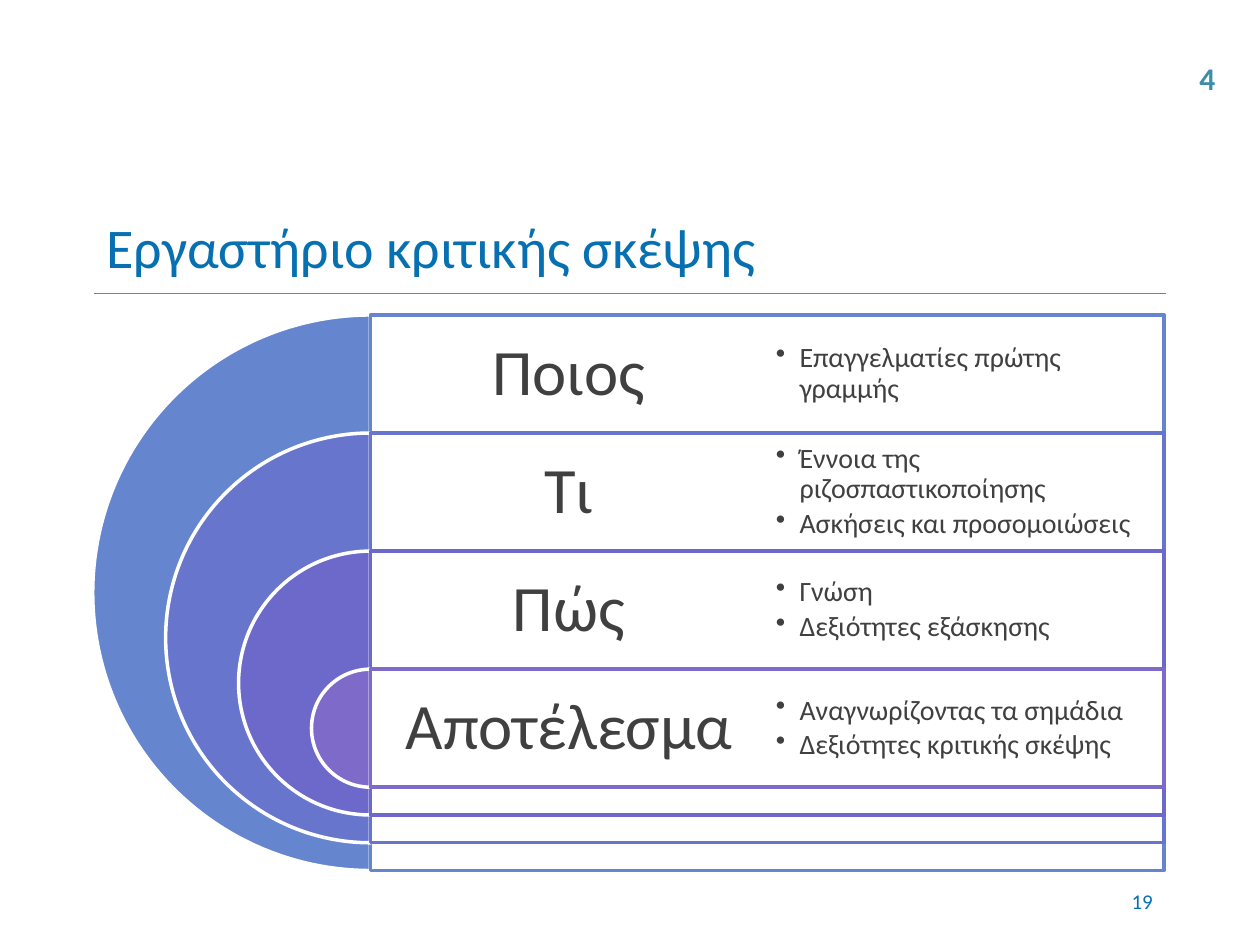
from lxml import etree
from pptx import Presentation
from pptx.dml.color import RGBColor
from pptx.enum.shapes import MSO_CONNECTOR, MSO_SHAPE
from pptx.enum.text import MSO_ANCHOR, PP_ALIGN
from pptx.oxml.ns import qn
from pptx.util import Cm, Pt

PIE, RECTANGLE = MSO_SHAPE.PIE, MSO_SHAPE.RECTANGLE
STRAIGHT = MSO_CONNECTOR.STRAIGHT
TOP, MIDDLE = MSO_ANCHOR.TOP, MSO_ANCHOR.MIDDLE
LEFT, CENTER, RIGHT = PP_ALIGN.LEFT, PP_ALIGN.CENTER, PP_ALIGN.RIGHT


class Theme:
    font = "Calibri"
    accent = RGBColor.from_string("0770B1")
    rule = RGBColor.from_string("0BA7DF")
    badge = RGBColor.from_string("3E8EA9")
    body = RGBColor.from_string("404040")
    white = RGBColor.from_string("FFFFFF")
    title_size = Pt(32)
    label_size = Pt(37)
    detail_size = Pt(16)
    badge_size = Pt(18)
    number_size = Pt(12)
    outline = Pt(2)


def add_text(left, top, width, height, lines, size, color, align=LEFT,
             anchor=MIDDLE, inset=None, spacing=None, after=0,
             bullet=False, bold=False, wrap=True):
    box = page.shapes.add_textbox(Cm(left), Cm(top), Cm(width), Cm(height))
    frame = box.text_frame
    frame.word_wrap = wrap
    frame.vertical_anchor = anchor
    if inset is not None:
        frame.margin_left = frame.margin_right = Cm(inset)
        frame.margin_top = frame.margin_bottom = Cm(inset)
    for index, line in enumerate(lines):
        para = frame.paragraphs[0] if index == 0 else frame.add_paragraph()
        para.alignment = align
        para.line_spacing = spacing
        para.space_after = Pt(after)
        if bullet:
            properties = para._p.get_or_add_pPr()
            properties.set("marL", str(Cm(0.48)))
            properties.set("indent", str(-Cm(0.48)))
            etree.SubElement(properties, qn("a:buChar"), char="•")
        span = para.add_run()
        span.text = line
        span.font.name = Theme.font
        span.font.size = size
        span.font.bold = bold
        span.font.color.rgb = color


def add_panel(kind, left, top, width, height, fill, line):
    shape = page.shapes.add_shape(kind, Cm(left), Cm(top), Cm(width), Cm(height))
    shape.shadow.inherit = False
    shape.fill.solid()
    shape.fill.fore_color.rgb = fill
    shape.line.color.rgb = line
    shape.line.width = Theme.outline
    return shape


deck = Presentation()
deck.slide_width, deck.slide_height = Cm(25.4), Cm(19.05)
page = deck.slides.add_slide(deck.slide_layouts[6])

rule = page.shapes.add_connector(STRAIGHT, Cm(1.9), Cm(5.92), Cm(23.5), Cm(5.92))
rule.line.color.rgb = Theme.rule
rule.line.width = Pt(0.75)
etree.SubElement(rule._element.spPr, qn("a:effectLst"))

add_text(18.21, 17.65, 5.28, 1.02, ["19"], Theme.number_size, Theme.accent, align=RIGHT)

rows = [
    ("Ποιος", "6585CF", ["Επαγγελματίες πρώτης γραμμής"]),
    ("Τι", "6775CD", ["Έννοια της ριζοσπαστικοποίησης", "Ασκήσεις και προσομοιώσεις"]),
    ("Πώς", "6C69CB", ["Γνώση", "Δεξιότητες εξάσκησης"]),
    ("Αποτέλεσμα", "7E6BC9", ["Αναγνωρίζοντας τα σημάδια", "Δεξιότητες κριτικής σκέψης"]),
]
axis, first_top, row_height, column = 7.47, 6.35, 2.38, 8
outer, shrink = 11.2, 2.94

for index, (label, shade, details) in enumerate(rows):
    color = RGBColor.from_string(shade)
    top = first_top + index * row_height
    diameter = outer - index * shrink

    pie = add_panel(PIE, axis - diameter / 2, top, diameter, diameter, color, Theme.white)
    pie.adjustments[0], pie.adjustments[1] = 54, 162

    panel = add_panel(RECTANGLE, axis, top, 2 * column, diameter, Theme.white, color)
    tint = panel._element.spPr.find(qn("a:solidFill"))[0]
    etree.SubElement(tint, qn("a:alpha"), val="90000")

    add_text(axis, top, column, row_height, [label], Theme.label_size, Theme.body,
             align=CENTER, inset=0.37, spacing=0.9, after=13)
    add_text(axis + column, top, column, row_height, details, Theme.detail_size,
             Theme.body, inset=0.17, spacing=0.9, after=2.4, bullet=True)

add_text(1.9, 4.01, 21.6, 1.9, ["Εργαστήριο κριτικής σκέψης"], Theme.title_size, Theme.accent)
add_text(23.93, 1.07, 0.84, 1.02, ["4"], Theme.badge_size, Theme.badge,
         anchor=TOP, bold=True, wrap=False)

deck.save("out.pptx")
